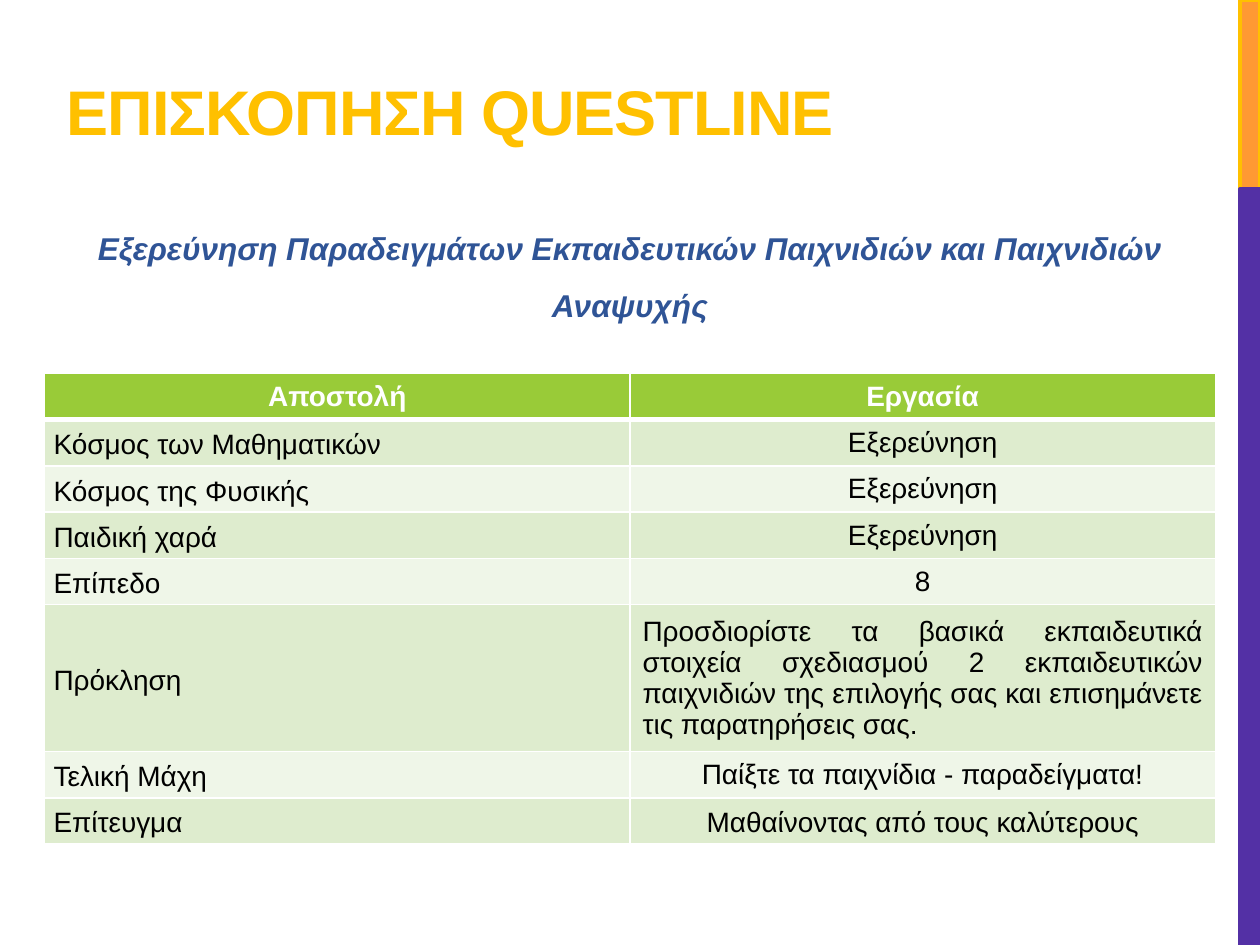
"""Build the questline overview slide."""
from lxml import etree
from pptx import Presentation
from pptx import util as u
from pptx.dml.color import RGBColor
from pptx.enum import shapes, text
from pptx.oxml.ns import qn

ORANGE = RGBColor(0xFF, 0x99, 0x33)
GOLD = RGBColor(0xFF, 0xC0, 0x00)
PURPLE = RGBColor(0x53, 0x30, 0xA5)
NAVY = RGBColor(0x2F, 0x54, 0x96)
WHITE = RGBColor(0xFF, 0xFF, 0xFF)
BLACK = RGBColor(0x00, 0x00, 0x00)
GREEN = RGBColor(0x99, 0xCB, 0x38)
BANDS = (RGBColor(0xDE, 0xEC, 0xCE), RGBColor(0xEF, 0xF6, 0xE8))

ALIGN = text.PP_ALIGN
LABEL = {"line_spacing": 1.15, "space_before": u.Pt(3), "space_after": u.Pt(3)}
NARROW = {"margin_left": u.Cm(0.18), "margin_right": u.Cm(0.18),
          "margin_top": 0, "margin_bottom": 0}
HEADINGS = ("Αποστολή", "Εργασία")
QUESTS = (
    ("Κόσμος των Μαθηματικών", "Εξερεύνηση"),
    ("Κόσμος της Φυσικής", "Εξερεύνηση"),
    ("Παιδική χαρά", "Εξερεύνηση"),
    ("Επίπεδο", "8"),
    ("Πρόκληση", "Προσδιορίστε τα βασικά εκπαιδευτικά στοιχεία σχεδιασμού "
     "2 εκπαιδευτικών παιχνιδιών της επιλογής σας και επισημάνετε τις παρατηρήσεις σας."),
    ("Τελική Μάχη", "Παίξτε τα παιχνίδια - παραδείγματα!"),
    ("Επίτευγμα", "Μαθαίνοντας από τους καλύτερους"),
)
CHALLENGE_ROW, LAST_ROW = 5, len(QUESTS)


def apply(target, values):
    """Set each attribute of the target from a dict."""
    for name, value in values.items():
        setattr(target, name, value)


def write(frame, words, size, color, para_format, **font_format):
    """Write one formatted paragraph and return its span."""
    para = frame.paragraphs[0]
    apply(para, para_format)
    span = para.add_run()
    span.text = words
    apply(span.font, {"name": "Arial", "size": u.Pt(size), **font_format})
    span.font.color.rgb = color
    return span


def add_title(page, words):
    """Place and format the title placeholder."""
    title = page.shapes.title
    apply(title, {"left": u.Cm(1.09), "top": u.Cm(-0.69),
                  "width": u.Cm(16.08), "height": u.Cm(3.81)})
    apply(title.text_frame, {"vertical_anchor": text.MSO_ANCHOR.BOTTOM,
                             "auto_size": text.MSO_AUTO_SIZE.NONE, "word_wrap": True})
    span = write(title.text_frame, words, 36, GOLD, {"alignment": ALIGN.LEFT}, bold=True)
    span.font._element.set("spc", "-60")


def add_bar(page, top, height, fill, line):
    """Add one part of the strip on the right edge."""
    bar = page.shapes.add_shape(shapes.MSO_SHAPE.RECTANGLE, u.Cm(25), u.Cm(top),
                                u.Cm(0.4), u.Cm(height))
    bar.shadow.inherit = False
    bar.fill.solid()
    bar.fill.fore_color.rgb = fill
    bar.line.color.rgb = line
    bar.line.width = u.Pt(2.25)


def add_subtitle(page, words):
    """Add the centred subtitle."""
    box = page.shapes.add_textbox(u.Cm(1.55), u.Cm(4.11), u.Cm(22.3), u.Cm(2.41))
    box.text_frame.word_wrap = True
    write(box.text_frame, words, 18, NAVY,
          {"alignment": ALIGN.CENTER, "line_spacing": 1.5, "space_after": u.Pt(6)},
          bold=True, italic=True)


def add_borders(cell, bottom):
    """Give a cell white borders, with its own bottom width."""
    props = cell._tc.get_or_add_tcPr()
    for side, width in (("L", 1), ("R", 1), ("T", 1), ("B", bottom)):
        line = etree.SubElement(props, qn(f"a:ln{side}"), w=str(u.Pt(width)))
        fill = etree.SubElement(line, qn("a:solidFill"))
        etree.SubElement(fill, qn("a:srgbClr"), val=str(WHITE))


def cell_format(row, column):
    """Return paragraph format and margins for a table cell."""
    if row and column == 0:
        return {"alignment": ALIGN.JUSTIFY if row < 4 else ALIGN.LEFT, **LABEL}, NARROW
    if row == LAST_ROW:
        return {"alignment": ALIGN.CENTER, **LABEL}, NARROW
    justified = row == CHALLENGE_ROW
    return {"alignment": ALIGN.JUSTIFY if justified else ALIGN.CENTER}, {}


def add_quest_table(page):
    """Add the table of missions and tasks."""
    rows = (HEADINGS, *QUESTS)
    table = page.shapes.add_table(len(rows), 2, u.Cm(0.9), u.Cm(7.53),
                                  u.Cm(23.6), u.Cm(9.4)).table
    for column in table.columns:
        column.width = u.Cm(11.8)
    for row, words in enumerate(rows):
        table.rows[row].height = u.Cm(2.96 if row == CHALLENGE_ROW else 0.92)
        header = row == 0
        for column, word in enumerate(words):
            cell = table.cell(row, column)
            para_format, margins = cell_format(row, column)
            apply(cell, {"vertical_anchor": text.MSO_ANCHOR.MIDDLE, **margins})
            add_borders(cell, 3 if header else 1)
            cell.fill.solid()
            cell.fill.fore_color.rgb = GREEN if header else BANDS[(row - 1) % 2]
            write(cell.text_frame, word, 16, WHITE if header else BLACK,
                  para_format, bold=header)


def main():
    """Build and save the deck."""
    deck = Presentation()
    deck.slide_width, deck.slide_height = u.Cm(25.4), u.Cm(19.05)
    page = deck.slides.add_slide(deck.slide_layouts.get_by_name("Title Only"))
    add_bar(page, 0, 3.81, ORANGE, GOLD)
    add_bar(page, 3.81, 15.24, PURPLE, PURPLE)
    add_title(page, "ΕΠΙΣΚΟΠΗΣΗ QUESTLINE")
    add_subtitle(page, "Εξερεύνηση Παραδειγμάτων Εκπαιδευτικών Παιχνιδιών "
                       "και Παιχνιδιών Αναψυχής")
    add_quest_table(page)
    deck.save("out.pptx")


if __name__ == "__main__":
    main()
